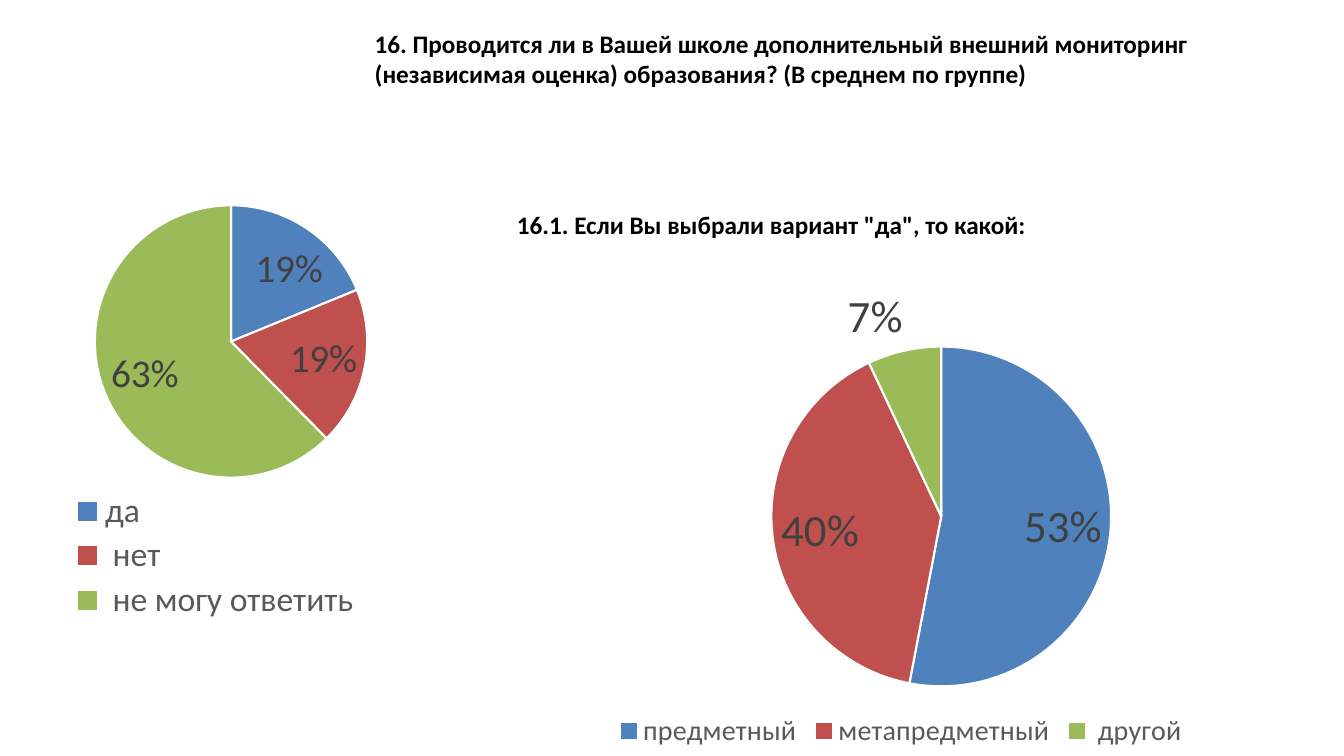
from typing import NamedTuple

from lxml import etree
from pptx import Presentation
from pptx.chart.data import CategoryChartData
from pptx.dml.color import RGBColor
from pptx.enum.chart import XL_CHART_TYPE, XL_LABEL_POSITION, XL_LEGEND_POSITION
from pptx.enum.text import MSO_AUTO_SIZE
from pptx.oxml.ns import qn
from pptx.util import Pt

PIE = XL_CHART_TYPE.PIE
BOTTOM = XL_LEGEND_POSITION.BOTTOM
BEST_FIT = XL_LABEL_POSITION.BEST_FIT
FIT_SHAPE = MSO_AUTO_SIZE.SHAPE_TO_FIT_TEXT

BLACK = RGBColor(0x00, 0x00, 0x00)
WHITE = RGBColor(0xFF, 0xFF, 0xFF)
DARK = RGBColor(0x40, 0x40, 0x40)
GREY = RGBColor(0x59, 0x59, 0x59)
BLUE = RGBColor(0x4F, 0x81, 0xBD)
RED = RGBColor(0xC0, 0x50, 0x4D)
GREEN = RGBColor(0x9B, 0xBB, 0x59)
FONT = "Calibri"


class Box(NamedTuple):
    left: float
    top: float
    width: float
    height: float


class Title(NamedTuple):
    box: Box
    text: str


class Pie(NamedTuple):
    """A pie chart; plot and key are fractions of its box."""
    box: Box
    plot: Box
    key: Box
    answers: dict[str, int]
    key_size: int
    label_size: int


TITLES = [
    Title(Box(260.6, 16.6, 635.8, 72.7),
          "16. Проводится ли в Вашей школе дополнительный внешний мониторинг "
          "(независимая оценка) образования? (В среднем по группе)"),
    Title(Box(362.2, 146.2, 551.5, 28.8),
          '16.1. Если Вы выбрали вариант "да", то какой:'),
]
PIES = [
    Pie(Box(9.4, 0, 277.9, 519.1), Box(0.21, 0.28, 0.7, 0.38),
        Box(0.12, 0.67, 0.8, 0.19),
        {"да": 19, " нет": 19, " не могу ответить": 63}, 24, 28),
    Pie(Box(321.1, 194.4, 638.6, 345.6), Box(0.36, 0.15, 0.38, 0.71),
        Box(0.18, 0.91, 0.65, 0.09),
        {"предметный": 53, "метапредметный": 40, " другой": 7}, 20, 32),
]


def style(font, size: float, color: RGBColor) -> None:
    font.name = FONT
    font.size = Pt(size)
    font.color.rgb = color


def place(parent, index: int, box: Box, inner: bool) -> None:
    """Give a plot area or legend a fixed layout, as child number index."""
    for old in parent.findall(qn("c:layout")):
        parent.remove(old)
    layout = etree.Element(qn("c:layout"))
    manual = etree.SubElement(layout, qn("c:manualLayout"))
    pairs = [("layoutTarget", "inner")] if inner else []
    pairs += [("xMode", "edge"), ("yMode", "edge")]
    pairs += [(tag, str(part)) for tag, part in zip("xywh", box)]
    for tag, value in pairs:
        etree.SubElement(manual, qn(f"c:{tag}")).set("val", value)
    parent.insert(index, layout)


def add_title(slide, title: Title) -> None:
    shape = slide.shapes.add_textbox(*map(Pt, title.box))
    frame = shape.text_frame
    frame.word_wrap = True
    frame.auto_size = FIT_SHAPE
    frame.text = title.text
    font = frame.paragraphs[0].runs[0].font
    style(font, 18, BLACK)
    font.bold = True


def add_pie(slide, pie: Pie) -> None:
    data = CategoryChartData()
    data.categories = list(pie.answers)
    data.add_series("Series 1", list(pie.answers.values()))
    chart = slide.shapes.add_chart(PIE, *map(Pt, pie.box), data).chart
    chart.has_title = False
    style(chart.font, 10, BLACK)

    chart.has_legend = True
    legend = chart.legend
    legend.position = BOTTOM
    legend.include_in_layout = False
    style(legend.font, pie.key_size, GREY)

    plot = chart.plots[0]
    plot.vary_by_categories = True
    series = plot.series[0]
    for index, color in enumerate((BLUE, RED, GREEN)):
        look = series.points[index].format
        look.fill.solid()
        look.fill.fore_color.rgb = color
        look.line.color.rgb = WHITE
        look.line.width = Pt(1.5)

    labels = series.data_labels
    labels.show_value = True
    labels.number_format = '0"%"'
    labels.number_format_is_linked = False
    labels.position = BEST_FIT
    style(labels.font, pie.label_size, DARK)

    area = chart.element.find(".//" + qn("c:plotArea"))
    place(area, 0, pie.plot, True)
    place(chart.element.find(".//" + qn("c:legend")), 1, pie.key, False)


def main() -> None:
    deck = Presentation()
    deck.slide_width = Pt(960)
    deck.slide_height = Pt(540)
    slide = deck.slides.add_slide(deck.slide_layouts[6])
    for title in TITLES:
        add_title(slide, title)
    for pie in PIES:
        add_pie(slide, pie)
    deck.save("out.pptx")


if __name__ == "__main__":
    main()
